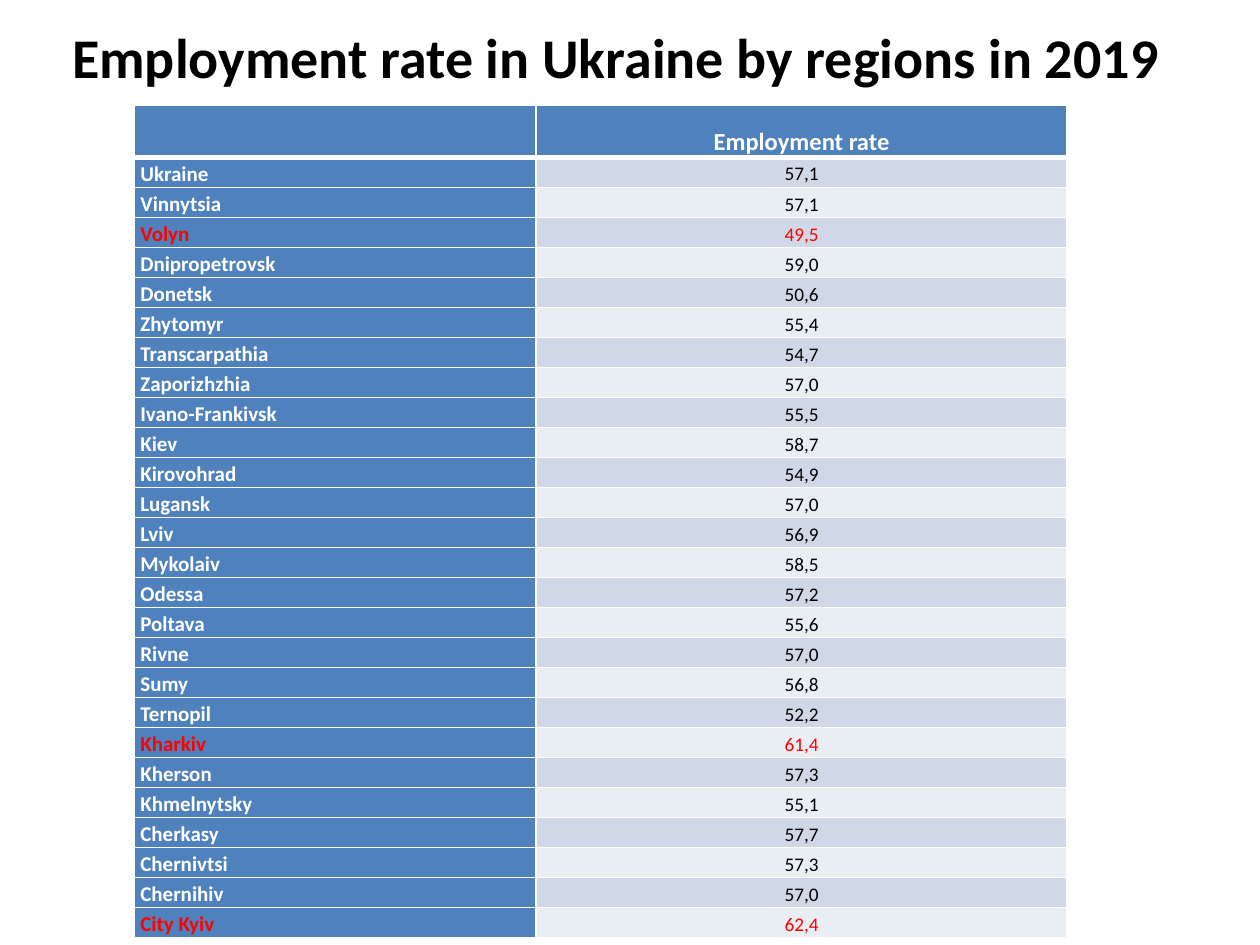
"""Build a slide with a table of employment rates by region of Ukraine."""
from dataclasses import dataclass

from lxml import etree
from pptx import Presentation
from pptx.dml.color import RGBColor
from pptx.enum.text import MSO_ANCHOR, PP_ALIGN
from pptx.oxml.ns import qn
from pptx.util import Cm, Pt

LEFT, CENTER = PP_ALIGN.LEFT, PP_ALIGN.CENTER
MIDDLE, BOTTOM = MSO_ANCHOR.MIDDLE, MSO_ANCHOR.BOTTOM

COLORS = {
    "white": "FFFFFF",
    "black": "000000",
    "highlight": "FF0000",
    "blue": "4F81BD",
    "band_dark": "D0D8E8",
    "band_light": "E9EDF4",
}

FORMATS = {
    "title": {
        "font": {"name": "Calibri", "size": Pt(32), "bold": True},
        "paragraph": {"alignment": CENTER},
        "frame": {"vertical_anchor": MIDDLE, "word_wrap": True},
    },
    "header": {
        "font": {"name": "Calibri", "size": Pt(14), "bold": True},
        "paragraph": {"alignment": CENTER, "line_spacing": 1.15},
        "frame": {"vertical_anchor": BOTTOM, "margin_left": 0, "margin_right": 0,
                  "margin_top": Cm(0.02), "margin_bottom": 0},
    },
    "region": {
        "font": {"name": "Calibri", "size": Pt(12), "bold": True},
        "paragraph": {"alignment": LEFT, "line_spacing": 1.15},
        "frame": {"vertical_anchor": BOTTOM, "margin_left": Cm(0.12),
                  "margin_right": Cm(0.12), "margin_top": 0, "margin_bottom": 0},
    },
    "rate": {
        "font": {"name": "Calibri", "size": Pt(11), "bold": False},
        "paragraph": {"alignment": CENTER, "line_spacing": 1.15, "space_after": Pt(10)},
        "frame": {"vertical_anchor": BOTTOM, "margin_left": 0, "margin_right": 0,
                  "margin_top": Cm(0.02), "margin_bottom": Cm(0.02)},
    },
}


@dataclass(frozen=True)
class Region:
    """One region with its employment rate."""

    name: str
    rate: str
    highlighted: bool = False


REGIONS = [
    Region("Ukraine", "57,1"),
    Region("Vinnytsia", "57,1"),
    Region("Volyn", "49,5", True),
    Region("Dnipropetrovsk", "59,0"),
    Region("Donetsk", "50,6"),
    Region("Zhytomyr", "55,4"),
    Region("Transcarpathia", "54,7"),
    Region("Zaporizhzhia", "57,0"),
    Region("Ivano-Frankivsk", "55,5"),
    Region("Kiev", "58,7"),
    Region("Kirovohrad", "54,9"),
    Region("Lugansk", "57,0"),
    Region("Lviv", "56,9"),
    Region("Mykolaiv", "58,5"),
    Region("Odessa", "57,2"),
    Region("Poltava", "55,6"),
    Region("Rivne", "57,0"),
    Region("Sumy", "56,8"),
    Region("Ternopil", "52,2"),
    Region("Kharkiv", "61,4", True),
    Region("Kherson", "57,3"),
    Region("Khmelnytsky", "55,1"),
    Region("Cherkasy", "57,7"),
    Region("Chernivtsi", "57,3"),
    Region("Chernihiv", "57,0"),
    Region("City Kyiv", "62,4", True),
]

TABLE_HEIGHT = Cm(16.79)
HEADER_HEIGHT = Cm(1.04)
COLUMN_WIDTHS = (Cm(8.1), Cm(10.7))


def set_attributes(target: object, values: dict) -> None:
    """Set every attribute of the target from the format values."""
    for name, value in values.items():
        setattr(target, name, value)


def write_text(frame, text: str, format_name: str, color: str) -> None:
    """Write one formatted paragraph into a text frame."""
    paragraph = frame.paragraphs[0]
    set_attributes(paragraph, FORMATS[format_name]["paragraph"])
    run = paragraph.add_run()
    run.text = text
    set_attributes(run.font, FORMATS[format_name]["font"])
    run.font.color.rgb = RGBColor.from_string(COLORS[color])


def style_cell(cell, fill: str, top: float = 1, bottom: float = 1) -> None:
    """Fill a cell and draw its white borders."""
    cell.fill.solid()
    cell.fill.fore_color.rgb = RGBColor.from_string(COLORS[fill])
    properties = cell._tc.get_or_add_tcPr()
    borders = {"lnL": 1, "lnR": 1, "lnT": top, "lnB": bottom}
    for position, (tag, width) in enumerate(borders.items()):
        line = etree.Element(qn(f"a:{tag}"), w=str(Pt(width)))
        solid = etree.SubElement(line, qn("a:solidFill"))
        etree.SubElement(solid, qn("a:srgbClr"), val=COLORS["white"])
        properties.insert(position, line)


def write_cell(cell, text: str, format_name: str, color: str) -> None:
    """Write formatted text into a table cell."""
    set_attributes(cell, FORMATS[format_name]["frame"])
    write_text(cell.text_frame, text, format_name, color)


def add_title(slide, text: str) -> None:
    """Add the slide title."""
    shape = slide.shapes.add_textbox(Cm(0.71), Cm(0.05), Cm(23.42), Cm(2.16))
    set_attributes(shape.text_frame, FORMATS["title"]["frame"])
    write_text(shape.text_frame, text, "title", "black")


def add_rate_table(slide, regions: list[Region]) -> None:
    """Add the table of regions and employment rates."""
    table = slide.shapes.add_table(
        len(regions) + 1, 2, Cm(2.71), Cm(2.13), sum(COLUMN_WIDTHS), TABLE_HEIGHT
    ).table
    for column, width in zip(table.columns, COLUMN_WIDTHS):
        column.width = width
    for row in table.rows:
        row.height = (TABLE_HEIGHT - HEADER_HEIGHT) // len(regions)
    table.rows[0].height = HEADER_HEIGHT

    for column in range(2):
        style_cell(table.cell(0, column), "blue", bottom=3)
    write_cell(table.cell(0, 1), "Employment rate", "header", "white")

    for number, region in enumerate(regions, start=1):
        name_cell, rate_cell = table.cell(number, 0), table.cell(number, 1)
        top = 3 if number == 1 else 1
        style_cell(name_cell, "blue", top=top)
        style_cell(rate_cell, "band_dark" if number % 2 else "band_light", top=top)
        name_color, rate_color = (
            ("highlight", "highlight") if region.highlighted else ("white", "black")
        )
        write_cell(name_cell, region.name, "region", name_color)
        write_cell(rate_cell, region.rate, "rate", rate_color)
    table.cell(1, 1).vertical_anchor = MIDDLE


def main() -> None:
    """Create the presentation and save it."""
    presentation = Presentation()
    presentation.slide_width = Cm(25.4)
    presentation.slide_height = Cm(19.05)
    slide = presentation.slides.add_slide(presentation.slide_layouts[6])
    add_title(slide, "Employment rate in Ukraine by regions in 2019")
    add_rate_table(slide, REGIONS)
    presentation.save("out.pptx")


if __name__ == "__main__":
    main()
